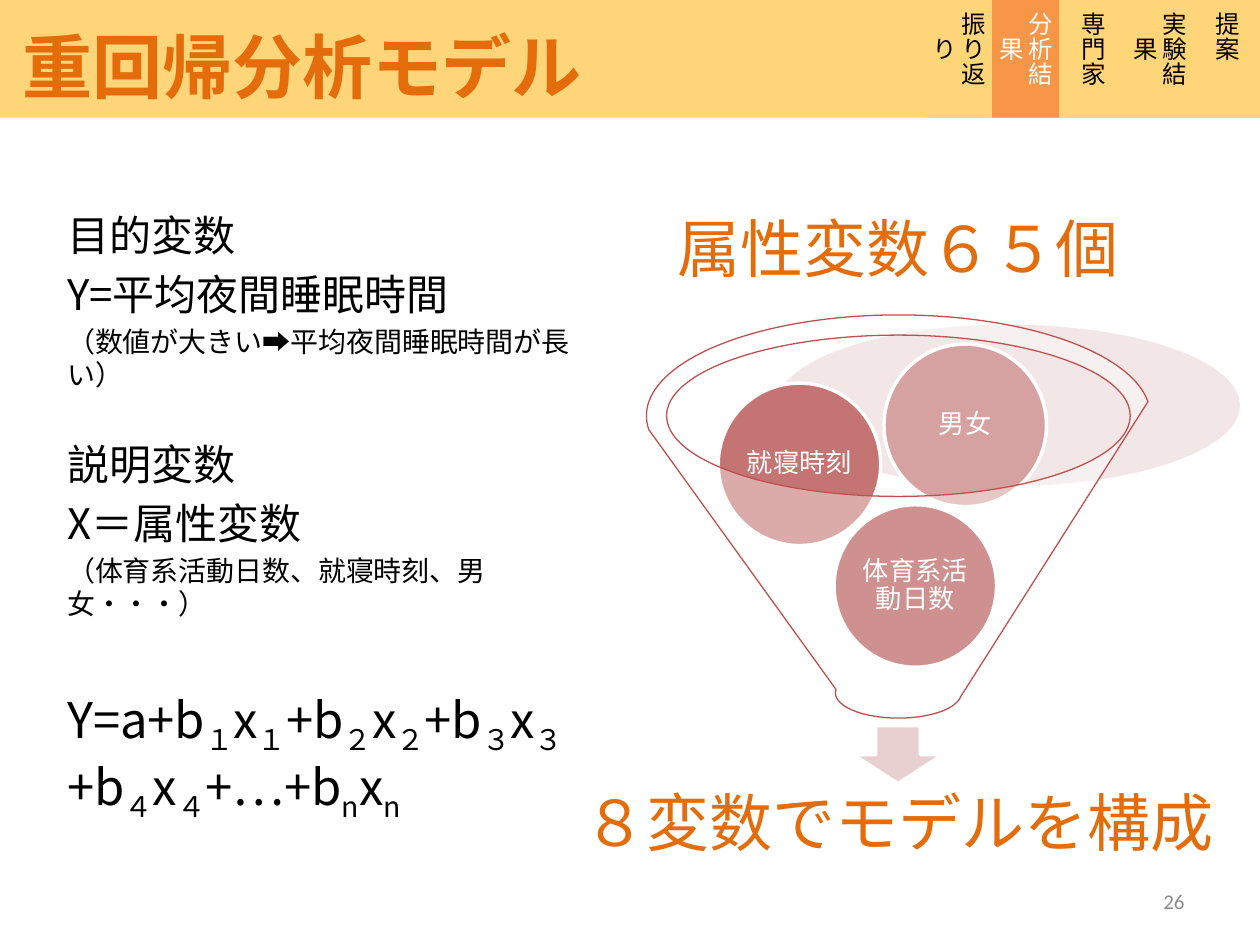
"""Build the multiple regression model slide."""
import lxml.etree
import pptx
import pptx.dml.color
import pptx.enum.shapes
import pptx.enum.text
import pptx.oxml.ns
import pptx.util

Pt = pptx.util.Pt
SHAPE = pptx.enum.shapes.MSO_SHAPE
ALIGN = pptx.enum.text.PP_ALIGN
ANCHOR = pptx.enum.text.MSO_ANCHOR
qn = pptx.oxml.ns.qn

ORANGE, BAND, ACTIVE = "E46C0A", "FFD579", "F79646"
BLACK, WHITE, GREY, RED = "000000", "FFFFFF", "8C8C8C", "C0504D"


def rgb(code):
    return pptx.dml.color.RGBColor.from_string(code)


class SlideBuilder:
    font_name = "Noto Sans CJK JP"

    def __init__(self, slide):
        self.slide = slide

    def style(self, paragraph, size, color, align=ALIGN.LEFT, bold=False, name=font_name):
        paragraph.alignment = align
        font = paragraph.font
        font.size, font.bold, font.name = Pt(size), bold, name
        font.color.rgb = rgb(color)
        lxml.etree.SubElement(font._rPr, qn("a:ea")).set("typeface", name)

    def title(self, box, text, size):
        heading = self.slide.shapes.title
        heading.left, heading.top, heading.width, heading.height = map(Pt, box)
        heading.element.getparent().append(heading.element)
        frame = heading.text_frame
        frame.text = text
        frame.word_wrap = False
        frame.vertical_anchor = ANCHOR.TOP
        frame.auto_size = pptx.enum.text.MSO_AUTO_SIZE.NONE
        self.style(frame.paragraphs[0], size, ORANGE, bold=True)

    def shape(self, kind, box, fill, line=None, line_width=2, alpha=None):
        shape = self.slide.shapes.add_shape(kind, *map(Pt, box))
        shape.shadow.inherit = False
        shape.fill.solid()
        shape.fill.fore_color.rgb = rgb(fill)
        if alpha:
            color = shape.element.spPr.find(qn("a:solidFill"))[0]
            lxml.etree.SubElement(color, qn("a:alpha")).set("val", str(alpha * 1000))
        if line:
            shape.line.color.rgb = rgb(line)
            shape.line.width = Pt(line_width)
        else:
            shape.line.fill.background()
        return shape

    def circle(self, left, top, fill, text):
        frame = self.shape(SHAPE.OVAL, (left, top, 92.9, 92.9), fill, WHITE).text_frame
        frame.margin_left = frame.margin_right = Pt(1.4)
        frame.margin_top = frame.margin_bottom = Pt(1.4)
        frame.vertical_anchor = ANCHOR.MIDDLE
        frame.text = text
        frame.paragraphs[0].line_spacing = 0.9
        self.style(frame.paragraphs[0], 15, WHITE, ALIGN.CENTER)

    def tab(self, box, text, active):
        frame = self.shape(SHAPE.RECTANGLE, box, ACTIVE if active else BAND).text_frame
        frame._txBody.bodyPr.set("vert", "eaVert")
        frame.vertical_anchor = ANCHOR.MIDDLE
        frame.text = text
        self.style(frame.paragraphs[0], 14, WHITE if active else BLACK, ALIGN.CENTER)

    def frame(self, box, anchor=ANCHOR.TOP):
        frame = self.slide.shapes.add_textbox(*map(Pt, box)).text_frame
        frame.word_wrap = True
        frame.vertical_anchor = anchor
        return frame

    def label(self, box, text, size, color, align, anchor=ANCHOR.TOP, name=font_name,
              spacing=1.0):
        frame = self.frame(box, anchor)
        frame.text = text
        frame.paragraphs[0].line_spacing = spacing
        self.style(frame.paragraphs[0], size, color, align, name=name)

    def body(self, box, rows):
        """Write rows of (text, size, space before); odd parts between bars are subscripts."""
        frame = self.frame(box)
        for index, (text, size, space) in enumerate(rows):
            paragraph = frame.add_paragraph() if index else frame.paragraphs[0]
            paragraph.space_before = Pt(space)
            self.style(paragraph, size, BLACK)
            for part, piece in enumerate(text.split("|")):
                run = paragraph.add_run()
                run.text = piece
                if part % 2:
                    run.font._rPr.set("baseline", "-25000")


def main():
    deck = pptx.Presentation()
    deck.slide_width, deck.slide_height = Pt(720), Pt(540)
    builder = SlideBuilder(deck.slides.add_slide(deck.slide_layouts[5]))

    builder.shape(SHAPE.OVAL, (443.5, 185.5, 265, 92.2), "E2C2C2", alpha=40)
    builder.shape(SHAPE.DOWN_ARROW, (487.6, 414.7, 51.1, 33.1), "E8D0D0", WHITE)
    builder.label((307.6, 441.2, 411.1, 61.9), "８変数でモデルを構成", 36, ORANGE,
                  ALIGN.CENTER, ANCHOR.MIDDLE, spacing=0.9)
    for left, top, fill, variable in (
        (476.6, 288.4, "AE4946", "体育系活動日数"),
        (410.4, 218.9, "C47472", "就寝時刻"),
        (505.1, 196.6, "D6A2A1", "男女"),
    ):
        builder.circle(left, top, fill, variable)
    builder.shape(SHAPE.FUNNEL, (369.4, 180, 288, 230.4), WHITE, RED, 0.75, alpha=40)
    builder.label((373, 115.9, 280.8, 51.1), "属性変数６５個", 36, ORANGE, ALIGN.CENTER)

    builder.body((31.3, 116.1, 329.9, 377.3), (
        ("目的変数", 24, 0),
        ("Y=平均夜間睡眠時間", 24, 4.8),
        ("（数値が大きい➡️平均夜間睡眠時間が長い）", 16, 3.2),
        ("説明変数", 24, 27),
        ("X＝属性変数", 24, 4.8),
        ("（体育系活動日数、就寝時刻、男女・・・）", 16, 3.2),
        ("Y=a+b|１|x|１|+b|２|x|２|+b|３|x|３|+b|４|x|４|+…+b|n|x|n", 28, 39.5),
    ))

    band_height, tab_width = 67.3, 38.3
    builder.shape(SHAPE.RECTANGLE, (0, 0, 720, band_height), BAND)
    builder.title((5.6, 9.7, 337.7, 55.4), "重回帰分析モデル", 40)
    builder.label((516.2, 500.4, 167.8, 28.8), "26", 12, GREY, ALIGN.RIGHT,
                  ANCHOR.MIDDLE, "Calibri")
    sections = ("提案", "実験結果", "専門家", "分析結果", "振り返り")
    for position, section in enumerate(sections, 1):
        box = (720 - position * tab_width, 0, tab_width, band_height)
        builder.tab(box, section, section == "分析結果")

    deck.save("out.pptx")


if __name__ == "__main__":
    main()
